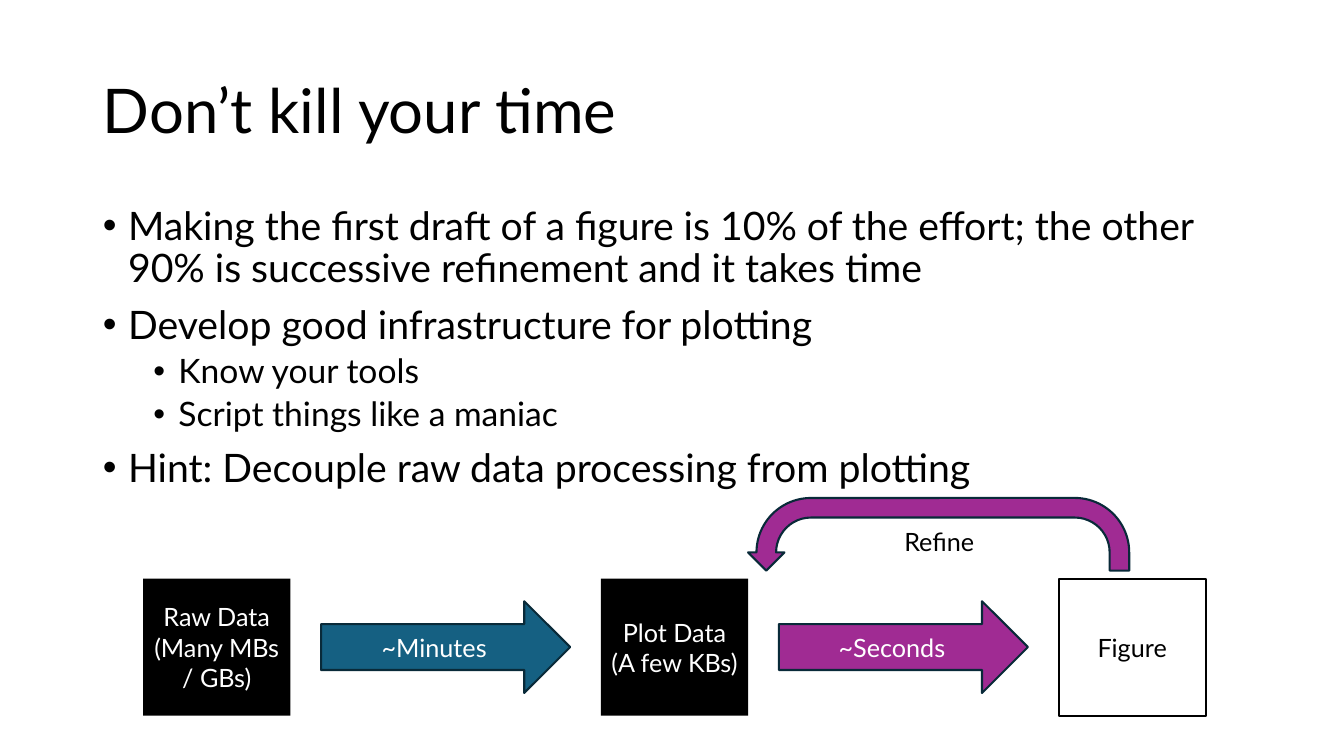
from lxml.etree import SubElement
from pptx import Presentation
from pptx.dml.color import RGBColor
from pptx.enum.shapes import MSO_SHAPE
from pptx.enum.text import MSO_ANCHOR, MSO_AUTO_SIZE, PP_ALIGN
from pptx.oxml.ns import qn
from pptx.util import Inches, Pt

BLACK = RGBColor(0x00, 0x00, 0x00)
WHITE = RGBColor(0xFF, 0xFF, 0xFF)
BLUE = RGBColor(0x15, 0x60, 0x82)
PURPLE = RGBColor(0xA0, 0x2B, 0x93)
NAVY = RGBColor(0x09, 0x2A, 0x39)

TITLE = "Don’t kill your time"
BULLETS = [
    (0, "Making the first draft of a figure is 10% of the effort; "
        "the other 90% is successive refinement and it takes time"),
    (0, "Develop good infrastructure for plotting"),
    (1, "Know your tools"),
    (1, "Script things like a maniac"),
    (0, "Hint: Decouple raw data processing from plotting"),
]
LEVELS = [(28, 10, 0.25), (24, 5, 0.75)]
STAGES = [
    ("Raw Data\n(Many MBs / GBs)", BLACK, None, WHITE),
    ("Plot Data (A few KBs)", BLACK, None, WHITE),
    ("Figure", WHITE, BLACK, BLACK),
]
STEPS = [("~Minutes", BLUE), ("~Seconds", PURPLE)]
REFINE = "Refine"

FLOW_LEFT, STAGE_TOP, STAGE_WIDTH, STAGE_HEIGHT = 1.42, 5.74, 1.46, 1.36
STEP_WIDTH, STEP_HEIGHT = 2.47, 0.91
PITCH = 4.54
STEP_OFFSET = STAGE_WIDTH + (PITCH - STAGE_WIDTH - STEP_WIDTH) / 2
STEP_TOP = STAGE_TOP + (STAGE_HEIGHT - STEP_HEIGHT) / 2


def place(part, left, top, width, height):
    """Move and size a part in inches."""
    part.left, part.top = Inches(left), Inches(top)
    part.width, part.height = Inches(width), Inches(height)


def style(paragraph, size, color, align):
    """Set the font and alignment of a paragraph."""
    paragraph.alignment = align
    paragraph.font.name = "Lato"
    paragraph.font.size = Pt(size)
    paragraph.font.color.rgb = color


def label(frame, text, color):
    """Write centred diagram text."""
    frame.text = text
    for paragraph in frame.paragraphs:
        style(paragraph, 18, color, PP_ALIGN.CENTER)


def add_block(slide, preset, box, fill, line):
    """Add a flat filled shape with an optional outline."""
    block = slide.shapes.add_shape(preset, *map(Inches, box))
    block.shadow.inherit = False
    block.fill.solid()
    block.fill.fore_color.rgb = fill
    if line is None:
        block.line.fill.background()
    else:
        block.line.color.rgb = line
        block.line.width = Pt(1.5)
    return block


def fill_title(title):
    """Write the slide title."""
    place(title, 0.92, 0.4, 11.5, 1.45)
    frame = title.text_frame
    frame.text = TITLE
    frame.auto_size = MSO_AUTO_SIZE.NONE
    frame.vertical_anchor = MSO_ANCHOR.MIDDLE
    frame.paragraphs[0].line_spacing = 0.9
    style(frame.paragraphs[0], 44, BLACK, PP_ALIGN.LEFT)


def fill_body(body):
    """Write the bulleted list."""
    place(body, 0.92, 2, 11.5, 4.76)
    frame = body.text_frame
    frame.text = "\n".join(text for _, text in BULLETS)
    frame.auto_size = MSO_AUTO_SIZE.NONE
    frame.vertical_anchor = MSO_ANCHOR.TOP
    for paragraph, (level, _) in zip(frame.paragraphs, BULLETS):
        size, space_before, indent = LEVELS[level]
        paragraph.level = level
        paragraph.line_spacing = 0.9
        paragraph.space_before = Pt(space_before)
        properties = paragraph._p.get_or_add_pPr()
        properties.set("marL", str(Inches(indent)))
        properties.set("indent", str(Inches(-0.25)))
        SubElement(properties, qn("a:buFont")).set("typeface", "Arial")
        SubElement(properties, qn("a:buChar")).set("char", "•")
        style(paragraph, size, BLACK, PP_ALIGN.LEFT)


def draw_flow(slide):
    """Draw the data stages, the steps between them and the refine loop."""
    for index, (text, fill, line, color) in enumerate(STAGES):
        box = (FLOW_LEFT + index * PITCH, STAGE_TOP, STAGE_WIDTH, STAGE_HEIGHT)
        stage = add_block(slide, MSO_SHAPE.RECTANGLE, box, fill, line)
        label(stage.text_frame, text, color)
    for index, (text, fill) in enumerate(STEPS):
        box = (FLOW_LEFT + STEP_OFFSET + index * PITCH, STEP_TOP, STEP_WIDTH, STEP_HEIGHT)
        step = add_block(slide, MSO_SHAPE.RIGHT_ARROW, box, fill, NAVY)
        label(step.text_frame, text, WHITE)

    loop = add_block(slide, MSO_SHAPE.U_TURN_ARROW, (7.42, 4.94, 3.78, 0.72), PURPLE, NAVY)
    for index, value in enumerate((0.27, 0.25, 0.25, 0.75, 1)):
        loop.adjustments[index] = value
    loop.element.spPr.xfrm.set("flipH", "1")

    refine = slide.shapes.add_textbox(*map(Inches, (8.82, 5.17, 0.99, 0.4)))
    refine.text_frame.word_wrap = False
    refine.text_frame.auto_size = MSO_AUTO_SIZE.NONE
    label(refine.text_frame, REFINE, BLACK)


def main():
    """Build and save the slide."""
    deck = Presentation()
    deck.slide_width, deck.slide_height = Inches(13.33), Inches(7.5)
    slide = deck.slides.add_slide(deck.slide_layouts[1])
    fill_title(slide.shapes.title)
    fill_body(slide.placeholders[1])
    draw_flow(slide)
    deck.save("out.pptx")


if __name__ == "__main__":
    main()
